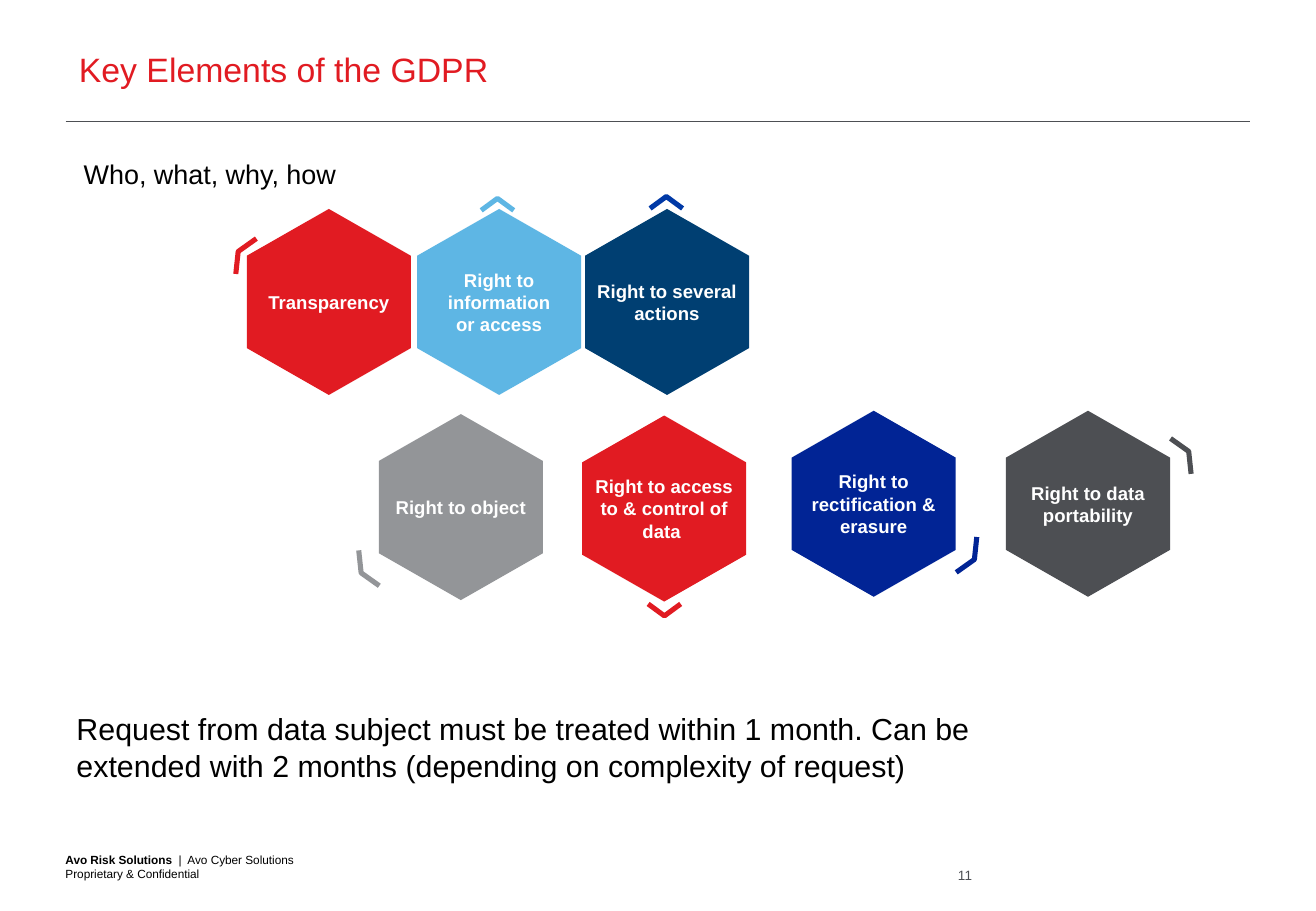
"""Build the slide on key elements of the GDPR."""
import pptx
import pptx.util
import pptx.dml.color
import pptx.enum.shapes
import pptx.enum.text
import pptx.oxml.ns
import lxml.etree

Cm = pptx.util.Cm
Pt = pptx.util.Pt
Align = pptx.enum.text.PP_ALIGN
Anchor = pptx.enum.text.MSO_ANCHOR

HUES = {
    "red": "E11B22", "sky": "5EB6E4", "navy": "003F72", "blue": "0039A6",
    "grey": "939598", "deep": "012495", "dark": "4D4F53",
    "black": "000000", "white": "FFFFFF",
}
HEX_W, HEX_H, HEX_CUT = 3.43, 3.89, 0.98
PEAK = [(-0.34, 0.25), (0, 0), (0.34, 0.25)]
BEND = [(-0.38, -0.27), (0, 0), (0.05, 0.47)]

HEXES = [
    (7.92, 8.66, "grey", ["Right to object"]),
    (5.16, 4.37, "red", ["Transparency"]),
    (8.72, 4.37, "sky", ["Right to information", "or access"]),
    (12.17, 8.69, "red", ["Right to access to & control of data "]),
    (21.03, 8.59, "dark", ["Right to data portability"]),
    (16.55, 8.59, "deep", ["Right to rectification & erasure"]),
    (12.23, 4.37, "navy", ["Right to several actions"]),
]
MARKS = [
    (PEAK, 13.93, 4.11, 1, 1, "blue"),
    (BEND, 24.85, 9.44, 1, 1, "dark"),
    (PEAK, 10.4, 4.15, 1, 1, "sky"),
    (BEND, 4.98, 5.26, -1, 1, "red"),
    (BEND, 7.55, 11.98, -1, -1, "grey"),
    (PEAK, 13.89, 12.88, 1, -1, "red"),
    (BEND, 20.37, 11.7, 1, -1, "deep"),
]


class Deck:
    def __init__(self, wide, high, font):
        self.font = font
        self.file = pptx.Presentation()
        self.file.slide_width, self.file.slide_height = Cm(wide), Cm(high)
        self.slide = self.file.slides.add_slide(self.file.slide_layouts[6])

    def hue(self, name):
        return pptx.dml.color.RGBColor.from_string(HUES[name])

    def words(self, frame, lines, size, hue, align=Align.LEFT):
        frame.word_wrap = True
        for i, runs in enumerate(lines):
            para = frame.paragraphs[0] if i == 0 else frame.add_paragraph()
            para.alignment = align
            for text, bold in runs:
                if text == "\n":
                    para.add_line_break()
                    continue
                run = para.add_run()
                run.text = text
                run.font.name, run.font.size = self.font, Pt(size)
                run.font.bold = bold
                run.font.color.rgb = self.hue(hue)

    def text(self, x, y, w, h, runs, size, hue, align=Align.LEFT, flush=False):
        box = self.slide.shapes.add_textbox(Cm(x), Cm(y), Cm(w), Cm(h))
        frame = box.text_frame
        if flush:
            frame.margin_left = frame.margin_right = 0
            frame.margin_top = frame.margin_bottom = 0
            frame.vertical_anchor = Anchor.BOTTOM
        self.words(frame, [runs], size, hue, align)

    def rule(self, x, y, end, hue):
        line = self.slide.shapes.add_connector(
            pptx.enum.shapes.MSO_CONNECTOR.STRAIGHT, Cm(x), Cm(y), Cm(end), Cm(y))
        line.line.color.rgb = self.hue(hue)
        line.line.width = Pt(0.75)
        lxml.etree.SubElement(line._element.spPr, pptx.oxml.ns.qn("a:effectLst"))

    def trace(self, spots, close):
        spots = [(Cm(x), Cm(y)) for x, y in spots]
        pen = self.slide.shapes.build_freeform(*spots[0])
        pen.add_line_segments(spots[1:], close=close)
        shape = pen.convert_to_shape()
        shape.shadow.inherit = False
        return shape

    def hex(self, x, y, hue, lines):
        mid, right = x + HEX_W / 2, x + HEX_W
        top, low = y + HEX_CUT, y + HEX_H - HEX_CUT
        shape = self.trace([(mid, y), (right, top), (right, low),
                            (mid, y + HEX_H), (x, low), (x, top)], True)
        shape.fill.solid()
        shape.fill.fore_color.rgb = self.hue(hue)
        shape.line.fill.background()
        shape.text_frame.vertical_anchor = Anchor.MIDDLE
        self.words(shape.text_frame, [[(text, True)] for text in lines],
                   11, "white", Align.CENTER)

    def mark(self, form, x, y, flip_x, flip_y, hue):
        shape = self.trace([(x + flip_x * a, y + flip_y * b) for a, b in form], False)
        shape.fill.background()
        shape.line.color.rgb = self.hue(hue)
        shape.line.width = Pt(3)


def main():
    deck = Deck(27.51, 19.05, "Arial")
    deck.rule(1.37, 2.54, 26.14, "dark")
    deck.text(19.25, 18.14, 1.07, 0.33, [("11", False)], 8, "dark", Align.RIGHT, True)
    deck.text(1.37, 17.81, 18.16, 0.61,
              [("Avo Risk Solutions ", True), (" | ", False),
               (" Avo Cyber Solutions", False), ("\n", False),
               ("Proprietary & Confidential", False)], 7, "black", flush=True)
    deck.text(1.4, 0.89, 23.83, 1.12, [("Key Elements of the GDPR", False)], 20, "red")
    for item in HEXES:
        deck.hex(*item)
    for item in MARKS:
        deck.mark(*item)
    deck.text(1.5, 3.18, 6.22, 0.94, [("Who, what, why, how", False)], 16, "black")
    deck.text(1.35, 14.73, 19.99, 1.8,
              [("Request from data subject must be treated within 1 month. Can be "
                "extended with 2 months (depending on complexity of request)", False)],
              18, "black")
    deck.file.save("out.pptx")


if __name__ == "__main__":
    main()
